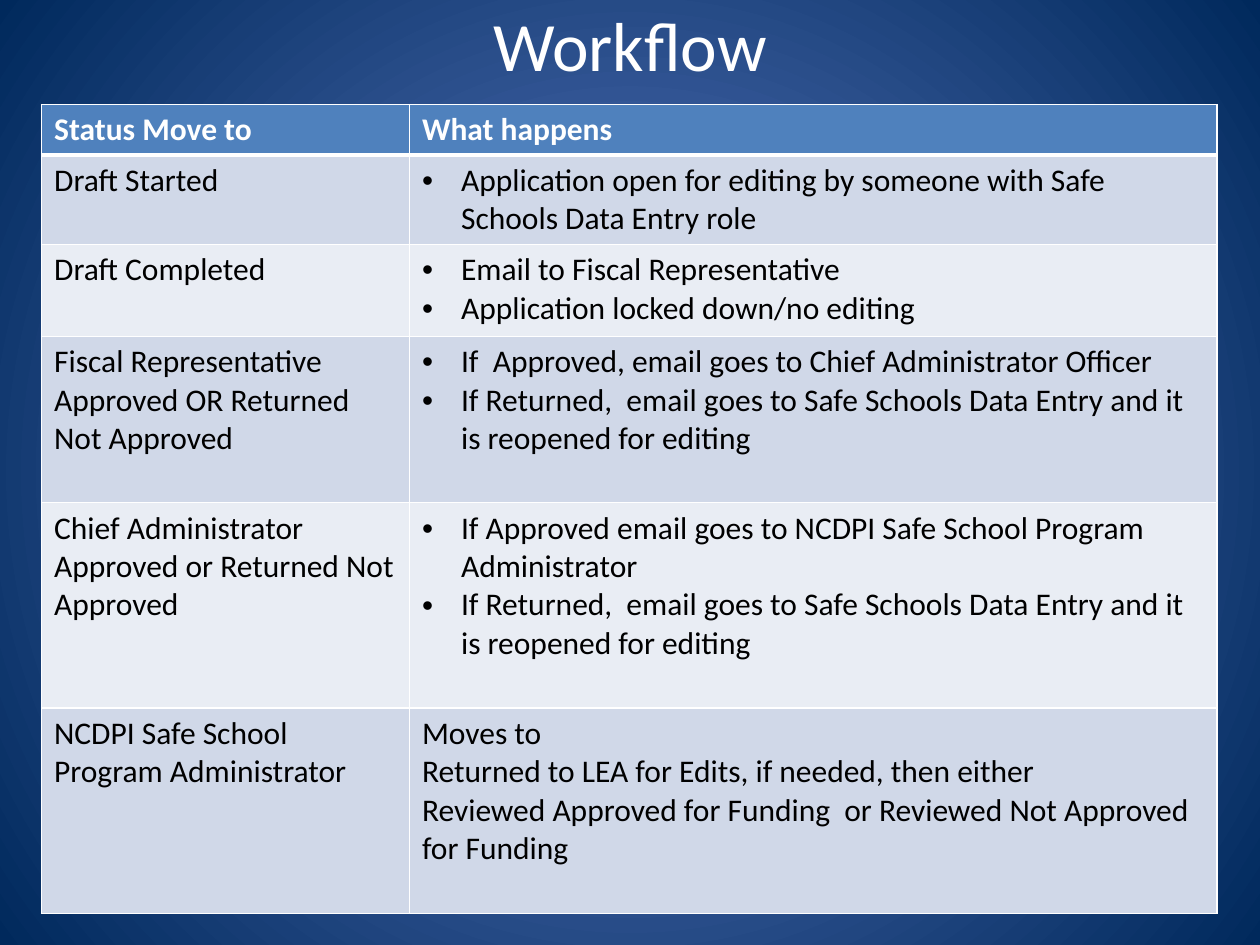
import pptx
import pptx.util
import pptx.dml.color
import pptx.enum.text
import pptx.oxml
import pptx.oxml.ns
from dataclasses import dataclass
from lxml import etree

Inches = pptx.util.Inches
Pt = pptx.util.Pt
qn = pptx.oxml.ns.qn


@dataclass(frozen=True)
class Theme:
    font: str = "Calibri"
    white: str = "FFFFFF"
    black: str = "000000"
    head: str = "4F81BD"
    bands: tuple = ("D0D8E8", "E9EDF4")
    inner: str = "5E7CC5"
    outer: str = "00295C"
    title: float = 39.6
    body: float = 18


THEME = Theme()
BULLET = "•"
HEADS = ("Status Move to", "What happens")
REOPEN = "If Returned,  email goes to Safe Schools Data Entry and it is reopened for editing"
# Status, mark before each step, steps, row height
STEPS = [
    ("Draft Started", BULLET,
     ["Application open for editing by someone with Safe Schools Data Entry role"], 0.71),
    ("Draft Completed", BULLET,
     ["Email to Fiscal Representative", "Application locked down/no editing"], 0.73),
    ("Fiscal Representative Approved OR Returned Not Approved", BULLET,
     ["If  Approved, email goes to Chief Administrator Officer", REOPEN], 1.32),
    ("Chief Administrator Approved or Returned Not Approved", BULLET,
     ["If Approved email goes to NCDPI Safe School Program Administrator", REOPEN], 1.63),
    ("NCDPI Safe School Program Administrator", None,
     ["Moves to", "Returned to LEA for Edits, if needed, then either",
      "Reviewed Approved for Funding  or Reviewed Not Approved for Funding"], 1.63),
]


def rgb(code):
    return pptx.dml.color.RGBColor.from_string(code)


def add_run(para, text, size, color, bold=False):
    run = para.add_run()
    run.text = text
    run.font.name = THEME.font
    run.font.size = Pt(size)
    run.font.bold = bold
    run.font.color.rgb = rgb(color)


def add_mark(para, mark):
    props = para._p.get_or_add_pPr()
    indent = Inches(0.31)
    props.set("marL", str(indent))
    props.set("indent", str(-indent))
    etree.SubElement(props, qn("a:buFont"), typeface="Arial")
    etree.SubElement(props, qn("a:buChar"), char=mark)


def add_lines(cell, base):
    """Rule all four sides of a cell in white, the base with its own width."""
    props = cell._tc.get_or_add_tcPr()
    for spot, (side, width) in enumerate(zip("LRTB", (1, 1, 1, base))):
        line = etree.Element(qn(f"a:ln{side}"), w=str(Pt(width)))
        fill = etree.SubElement(line, qn("a:solidFill"))
        etree.SubElement(fill, qn("a:srgbClr"), val=THEME.white)
        props.insert(spot, line)


def fill_cell(cell, texts, fill, color, mark=None, head=False):
    cell.fill.solid()
    cell.fill.fore_color.rgb = rgb(fill)
    add_lines(cell, 3 if head else 1)
    frame = cell.text_frame
    for spot, text in enumerate(texts):
        para = frame.add_paragraph() if spot else frame.paragraphs[0]
        if mark:
            add_mark(para, mark)
        add_run(para, text, THEME.body, color, head)


def paint_back(slide):
    """Fill the slide with a gradient that spreads from its centre."""
    fill = slide.background.fill
    fill.gradient()
    for stop, color in zip(fill.gradient_stops, (THEME.inner, THEME.outer)):
        stop.color.rgb = rgb(color)
    grad = next(slide.background._cSld.iter(qn("a:gradFill")))
    line = grad.find(qn("a:lin"))
    ring = etree.Element(qn("a:path"), {"path": "circle"})
    etree.SubElement(ring, qn("a:fillToRect"), {side: "50000" for side in "ltrb"})
    grad.replace(line, ring)


def add_title(slide, left, top, width, height):
    frame = slide.shapes.add_textbox(left, top, width, height).text_frame
    frame.word_wrap = True
    frame.margin_top = frame.margin_bottom = 0
    frame.vertical_anchor = pptx.enum.text.MSO_ANCHOR.MIDDLE
    para = frame.paragraphs[0]
    para.alignment = pptx.enum.text.PP_ALIGN.CENTER
    add_run(para, "Workflow", THEME.title, THEME.white)


def add_steps(slide, left, top, width, height):
    table = slide.shapes.add_table(len(STEPS) + 1, 2, left, top, width, height).table
    first = Inches(2.92)
    table.columns[0].width = first
    table.columns[1].width = width - first
    tall = [Inches(step[-1]) for step in STEPS]
    for row, size in zip(table.rows, [height - sum(tall)] + tall):
        row.height = size
    for col, text in enumerate(HEADS):
        fill_cell(table.cell(0, col), [text], THEME.head, THEME.white, head=True)
    for row, (status, mark, texts, _) in enumerate(STEPS, 1):
        band = THEME.bands[(row - 1) % 2]
        fill_cell(table.cell(row, 0), [status], band, THEME.black)
        fill_cell(table.cell(row, 1), texts, band, THEME.black, mark)


def main():
    deck = pptx.Presentation()
    deck.slide_width, deck.slide_height = Inches(10), Inches(7.5)
    slide = deck.slides.add_slide(deck.slide_layouts[6])
    paint_back(slide)
    add_title(slide, Inches(0.5), Inches(0.03), Inches(9), Inches(0.63))
    add_steps(slide, Inches(0.33), Inches(0.83), Inches(9.33), Inches(6.42))
    deck.save("out.pptx")


if __name__ == "__main__":
    main()
